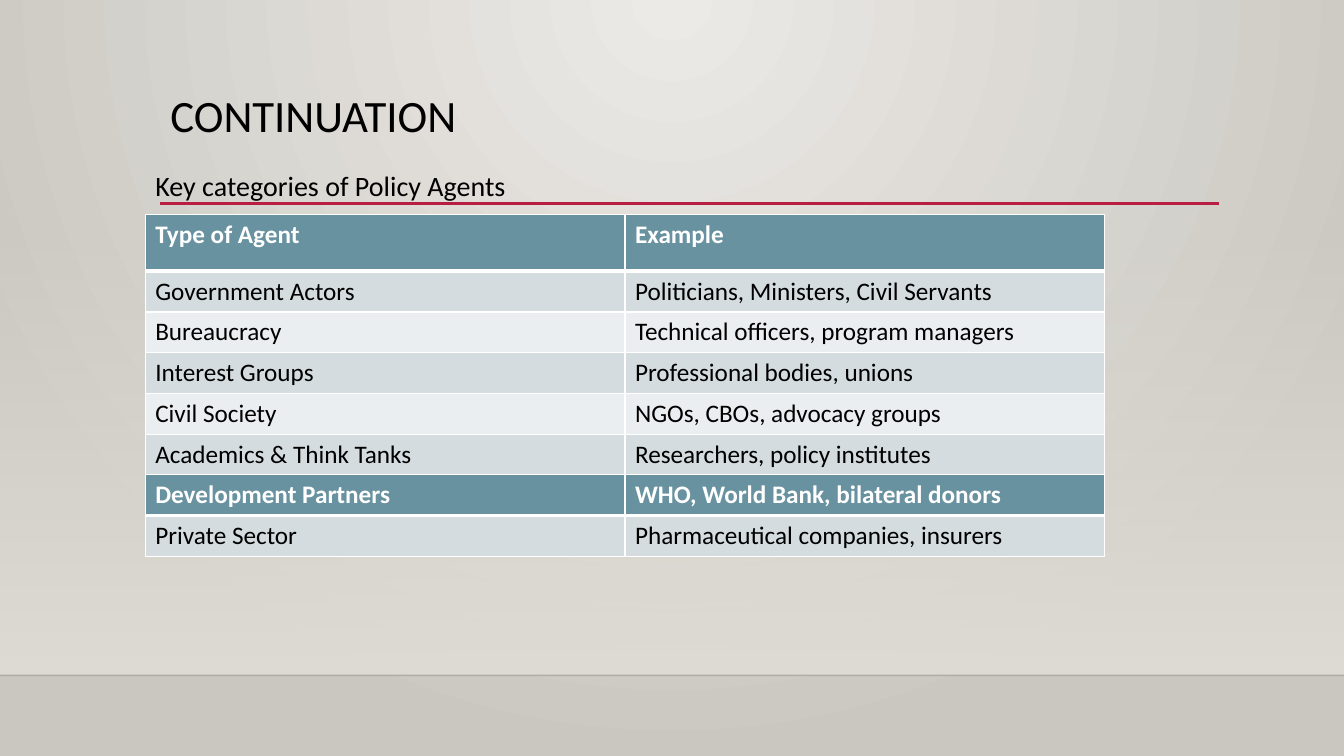
from dataclasses import dataclass

from lxml.etree import SubElement
from pptx import Presentation
from pptx.dml.color import RGBColor
from pptx.enum.shapes import MSO_CONNECTOR, MSO_SHAPE
from pptx.enum.text import MSO_ANCHOR, MSO_AUTO_SIZE, PP_ALIGN
from pptx.oxml import parse_xml
from pptx.oxml.ns import nsdecls, qn
from pptx.util import Cm, Pt

FONT = "Calibri"
BLACK, WHITE, TEAL, CRIMSON = "000000", "FFFFFF", "6892A0", "B71E42"
BANDS = ("D4DCDF", "EBEEF0")
SLIDE_WIDTH, SLIDE_HEIGHT, FLOOR_TOP = 33.87, 19.05, 17.02
TABLE_LEFT, COLUMN_WIDTH, ROW_HEIGHT = 3.66, 12.09, 1.03


@dataclass
class Rule:
    """A horizontal line across part of the slide."""

    left: float
    right: float
    top: float
    color: str
    width: float
    opacity: int = 100


@dataclass
class Heading:
    """Text and geometry of a placeholder."""

    text: str
    left: float
    top: float
    height: float
    size: int
    line_spacing: float


@dataclass
class AgentTable:
    """A two-column table whose first row is a header."""

    top: float
    header_height: float
    rows: list[tuple[str, str]]


RULES = [
    Rule(0, SLIDE_WIDTH, FLOOR_TOP, "000001", 1, 20),
    Rule(4.04, 30.73, 5.13, CRIMSON, 2.5),
]
HEADINGS = [
    Heading("CONTINUATION", 4.04, 2.24, 2.92, 32, 0.9),
    Heading("Key categories of Policy Agents", 3.66, 3.96, 11.84, 20, 1.2),
]
TABLES = [
    AgentTable(5.41, 1.42, [
        ("Type of Agent", "Example"),
        ("Government Actors", "Politicians, Ministers, Civil Servants"),
        ("Bureaucracy", "Technical officers, program managers"),
        ("Interest Groups", "Professional bodies, unions"),
        ("Civil Society", "NGOs, CBOs, advocacy groups"),
        ("Academics & Think Tanks", "Researchers, policy institutes"),
    ]),
    AgentTable(11.96, ROW_HEIGHT, [
        ("Development Partners", "WHO, World Bank, bilateral donors"),
        ("Private Sector", "Pharmaceutical companies, insurers"),
    ]),
]


def rgb(color: str) -> RGBColor:
    """Turn a hex string into a colour."""
    return RGBColor.from_string(color)


def add_run(paragraph, text: str, size: int, color: str, bold: bool = False) -> None:
    """Append a formatted run to a paragraph."""
    run = paragraph.add_run()
    run.text = text
    run.font.name, run.font.size, run.font.bold = FONT, Pt(size), bold
    run.font.color.rgb = rgb(color)


def set_background(slide) -> None:
    """Fill the slide with a circular gradient that is lightest at the top."""
    slide.background.fill.solid()
    properties = slide.element.find(".//" + qn("p:bgPr"))
    properties.replace(properties[0], parse_xml(
        f'<a:gradFill {nsdecls("a")} rotWithShape="1"><a:gsLst>'
        '<a:gs pos="0"><a:srgbClr val="ECEAE7"/></a:gs>'
        '<a:gs pos="100000"><a:srgbClr val="CAC7C1"/></a:gs></a:gsLst>'
        '<a:path path="circle"><a:fillToRect l="43000" r="43000" b="100000"/></a:path>'
        '</a:gradFill>'))


def add_wall(slide) -> None:
    """Draw the band that fades in towards the floor line."""
    top = 5.61
    wall = slide.shapes.add_shape(
        MSO_SHAPE.RECTANGLE, 0, Cm(top), Cm(SLIDE_WIDTH), Cm(FLOOR_TOP - top))
    wall.shadow.inherit = False
    wall.line.fill.background()
    wall.fill.gradient()
    wall.fill.gradient_angle = 270
    for stop in wall.fill.gradient_stops:
        stop.color.rgb = rgb("DFDBD5")
    first_color = wall.element.spPr.find(".//" + qn("a:srgbClr"))
    SubElement(first_color, qn("a:alpha"), val="0")


def add_rule(slide, rule: Rule) -> None:
    """Draw one horizontal line."""
    line = slide.shapes.add_connector(
        MSO_CONNECTOR.STRAIGHT, Cm(rule.left), Cm(rule.top), Cm(rule.right), Cm(rule.top))
    line.line.color.rgb = rgb(rule.color)
    line.line.width = Pt(rule.width)
    properties = line.element.spPr
    if rule.opacity < 100:
        color = properties.find(".//" + qn("a:srgbClr"))
        SubElement(color, qn("a:alpha"), val=str(rule.opacity * 1000))
    SubElement(properties, qn("a:effectLst"))


def fill_placeholder(slide, placeholder, heading: Heading) -> None:
    """Place a placeholder in front of the backdrop and write its text."""
    slide.shapes.element.append(placeholder.element)
    placeholder.left, placeholder.top = Cm(heading.left), Cm(heading.top)
    placeholder.width, placeholder.height = Cm(26.67), Cm(heading.height)
    frame = placeholder.text_frame
    frame.word_wrap = True
    frame.auto_size = MSO_AUTO_SIZE.NONE
    frame.vertical_anchor = MSO_ANCHOR.TOP
    paragraph = frame.paragraphs[0]
    properties = paragraph._p.get_or_add_pPr()
    properties.set("marL", "0")
    properties.set("indent", "0")
    SubElement(properties, qn("a:buNone"))
    paragraph.alignment = PP_ALIGN.LEFT
    paragraph.line_spacing = heading.line_spacing
    paragraph.space_before = Pt(0)
    add_run(paragraph, heading.text, heading.size, BLACK)


def format_cell(cell, text: str, row: int) -> None:
    """Write, border and fill one table cell."""
    is_header = row == 0
    properties = cell._tc.get_or_add_tcPr()
    for side in "LRTB":
        thick = (side == "B" and is_header) or (side == "T" and row == 1)
        border = SubElement(properties, qn(f"a:ln{side}"), w=str(Pt(3 if thick else 1)))
        fill = SubElement(border, qn("a:solidFill"))
        SubElement(fill, qn("a:srgbClr"), val=WHITE)
    cell.fill.solid()
    cell.fill.fore_color.rgb = rgb(TEAL if is_header else BANDS[(row - 1) % 2])
    add_run(cell.text_frame.paragraphs[0], text, 18, WHITE if is_header else BLACK, is_header)


def add_agent_table(slide, agents: AgentTable) -> None:
    """Draw one table of policy agents."""
    height = agents.header_height + ROW_HEIGHT * (len(agents.rows) - 1)
    table = slide.shapes.add_table(
        len(agents.rows), 2, Cm(TABLE_LEFT), Cm(agents.top),
        Cm(2 * COLUMN_WIDTH), Cm(height)).table
    for column in table.columns:
        column.width = Cm(COLUMN_WIDTH)
    for row, texts in enumerate(agents.rows):
        table.rows[row].height = Cm(ROW_HEIGHT if row else agents.header_height)
        for column, text in enumerate(texts):
            format_cell(table.cell(row, column), text, row)


def main() -> None:
    """Build the slide and save the presentation."""
    presentation = Presentation()
    presentation.slide_width, presentation.slide_height = Cm(SLIDE_WIDTH), Cm(SLIDE_HEIGHT)
    slide = presentation.slides.add_slide(presentation.slide_layouts[1])
    set_background(slide)
    add_wall(slide)
    for rule in RULES:
        add_rule(slide, rule)
    for placeholder, heading in zip(list(slide.placeholders), HEADINGS):
        fill_placeholder(slide, placeholder, heading)
    for agents in TABLES:
        add_agent_table(slide, agents)
    presentation.save("out.pptx")


if __name__ == "__main__":
    main()
